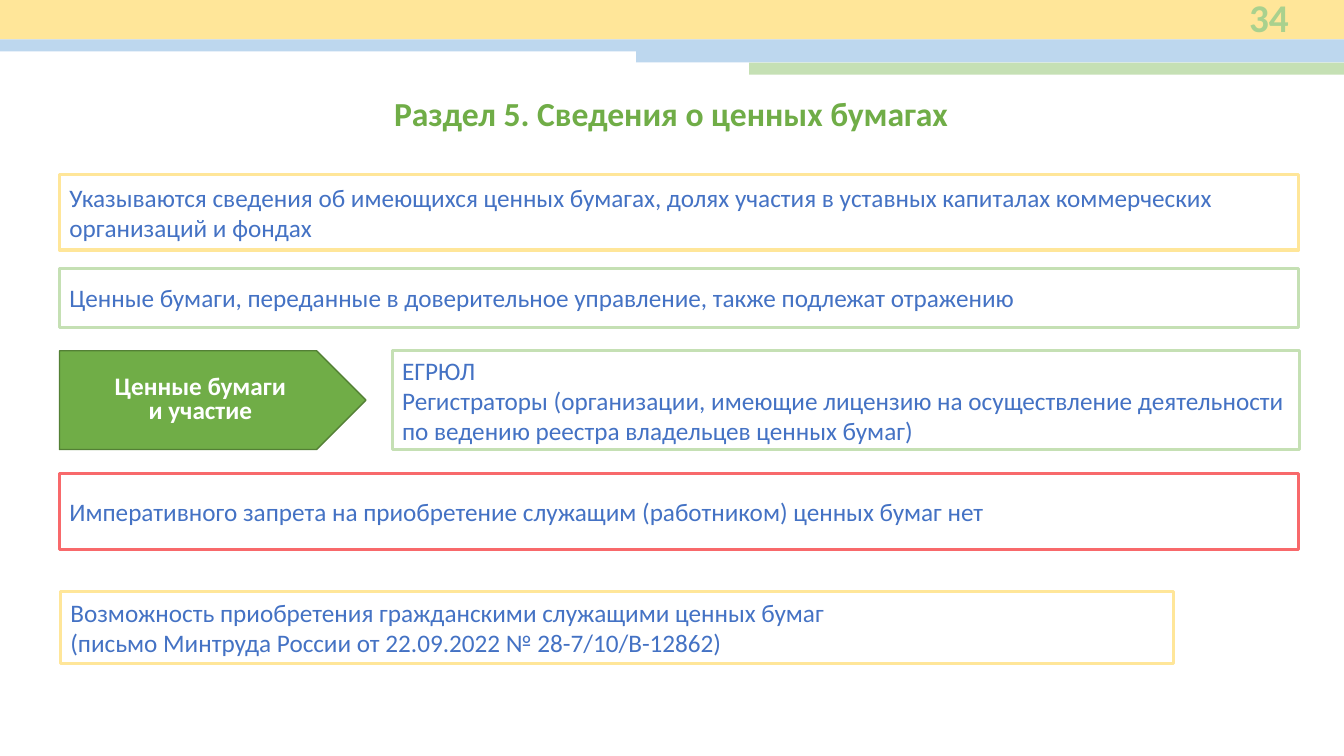
"""Build the slide on section 5, securities."""
from pptx import Presentation
from pptx.dml.color import RGBColor
from pptx.enum.shapes import MSO_SHAPE as Form
from pptx.enum.text import MSO_ANCHOR as Anchor, MSO_AUTO_SIZE as Auto, PP_ALIGN as Align
from pptx.util import Inches, Pt


def add_box(form, area, fill=None, line=None, width=2.25):
    box = slide.shapes.add_shape(form, *map(Inches, area))
    box.shadow.inherit = False
    if fill:
        box.fill.solid()
        box.fill.fore_color.rgb = RGBColor.from_string(fill)
    else:
        box.fill.background()
    if line:
        box.line.color.rgb = RGBColor.from_string(line)
        box.line.width = Pt(width)
    else:
        box.line.fill.background()
    return box


def write(box, text, size, color, bold=False, align=Align.LEFT, anchor=Anchor.MIDDLE, space=1.0):
    frame = box.text_frame
    frame.text = text
    frame.word_wrap = True
    frame.auto_size = Auto.NONE
    frame.vertical_anchor = anchor
    for para in frame.paragraphs:
        para.alignment = align
        para.line_spacing = space
        for run in para.runs:
            run.font.name = "Calibri"
            run.font.size = Pt(size)
            run.font.bold = bold
            run.font.color.rgb = RGBColor.from_string(color)


deck = Presentation()
deck.slide_width = Inches(13.33)
deck.slide_height = Inches(7.5)
slide = deck.slides.add_slide(deck.slide_layouts[5])

YELLOW, BLUE, GREEN, RED = "FFE699", "BDD7EE", "C5E0B4", "F8696B"
LEFT, WIDE = 0.59, 12.29

bands = [
    (0, 0, 0.39, YELLOW),
    (0, 0.39, 0.12, BLUE),
    (6.31, 0.5, 0.12, BLUE),
    (7.43, 0.62, 0.12, GREEN),
]
for left, top, height, color in bands:
    add_box(Form.RECTANGLE, (left, top, 13.33 - left, height), fill=color)

title = slide.shapes.title
title.left, title.top = Inches(LEFT), Inches(0.87)
title.width, title.height = Inches(12.13), Inches(0.5)
write(title, "Раздел 5. Сведения о ценных бумагах", 24, "70AD47", True, Align.CENTER, Anchor.TOP)

notes = [
    (LEFT, 1.73, WIDE, 0.75, YELLOW,
     "Указываются сведения об имеющихся ценных бумагах, долях участия "
     "в уставных капиталах коммерческих организаций и фондах"),
    (LEFT, 2.66, WIDE, 0.59, GREEN,
     "Ценные бумаги, переданные в доверительное управление, также подлежат отражению"),
    (3.89, 3.48, 9, 0.98, GREEN,
     "ЕГРЮЛ\nРегистраторы (организации, имеющие лицензию на осуществление "
     "деятельности по ведению реестра владельцев ценных бумаг)"),
    (LEFT, 4.7, WIDE, 0.75, RED,
     "Императивного запрета на приобретение служащим (работником) ценных бумаг нет"),
    (0.6, 5.87, 11.04, 0.71, YELLOW,
     "Возможность приобретения гражданскими служащими ценных бумаг\v"
     "(письмо Минтруда России от 22.09.2022 № 28-7/10/В-12862)"),
]
for *area, color, text in notes:
    write(add_box(Form.RECTANGLE, area, line=color), text, 18, "4472C4")

arrow = add_box(Form.PENTAGON, (LEFT, 3.48, 3.04, 0.98), "70AD47", "538035", 1)
write(arrow, "Ценные бумаги\vи участие", 18, "FFFFFF", True, Align.CENTER, space=0.8)

number = slide.shapes.add_textbox(*map(Inches, (11.63, -0.05, 1.25, 0.44)))
write(number, "34", 28, "A9D18E", True, Align.RIGHT)

deck.save("out.pptx")
